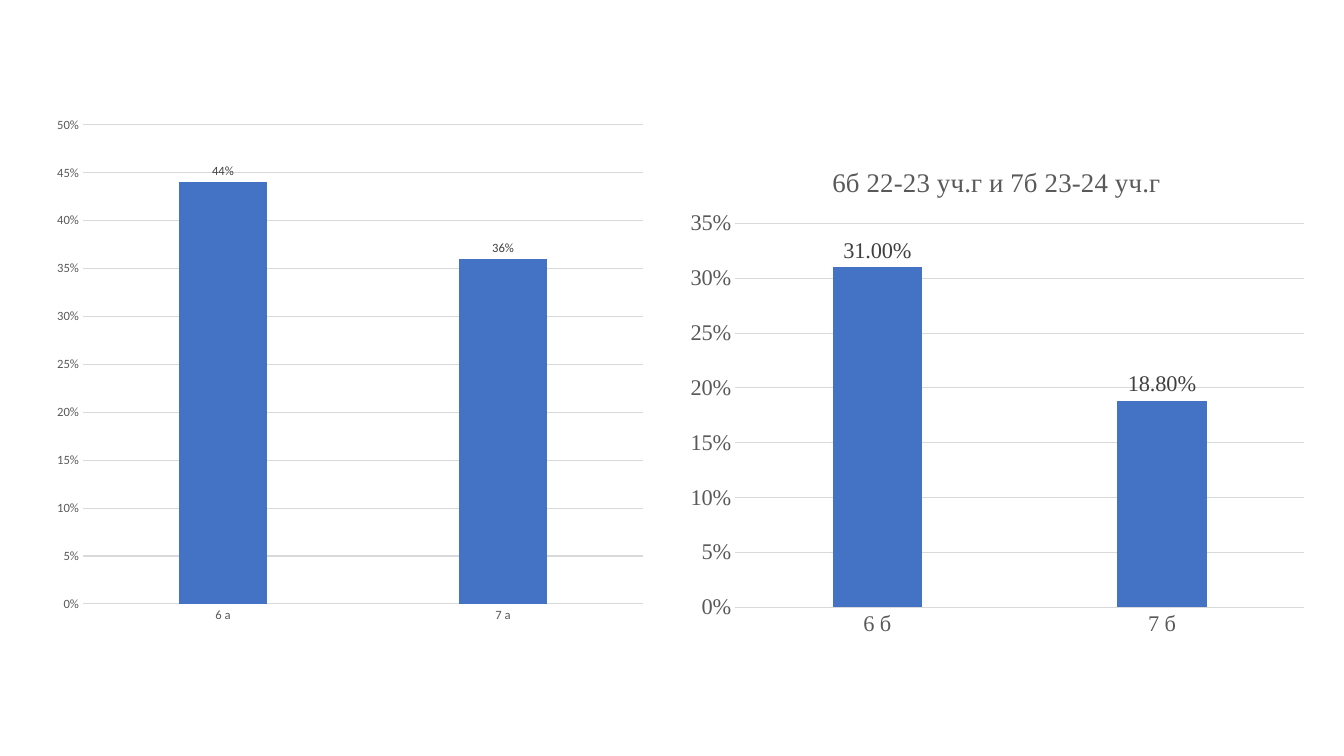
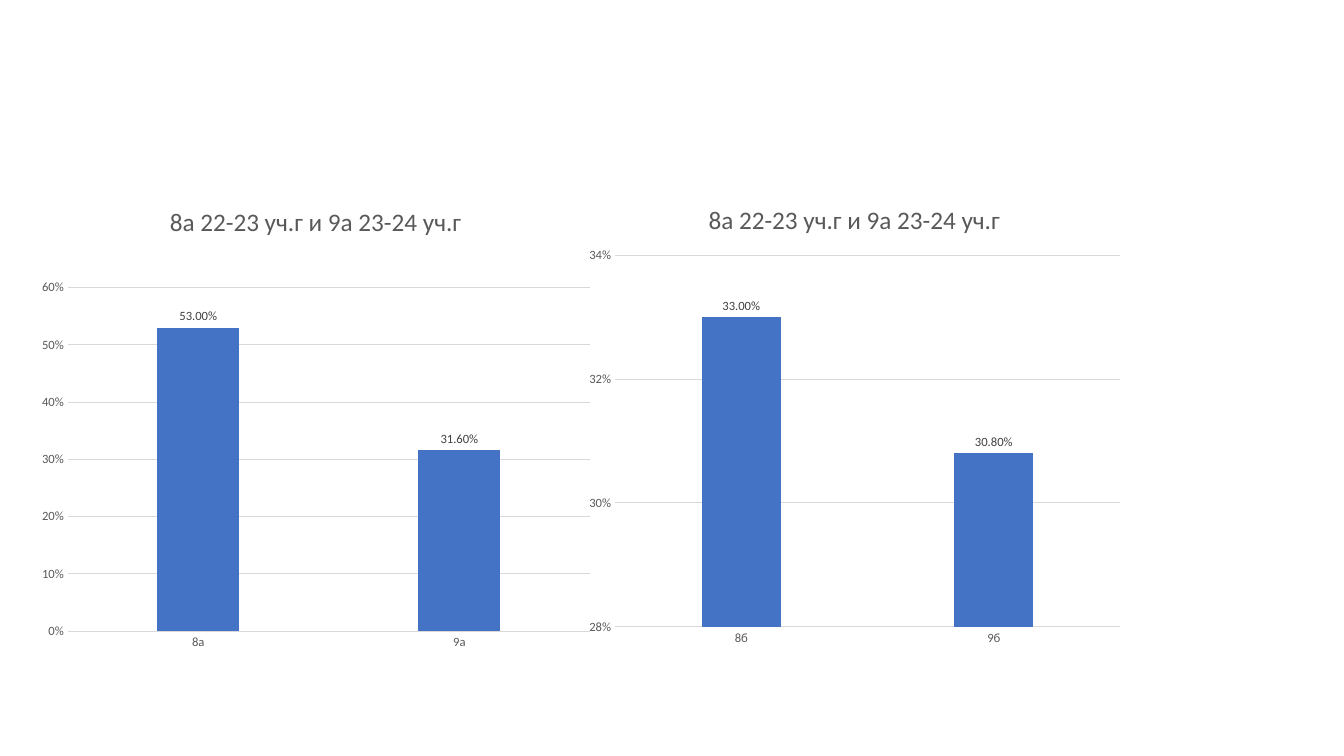
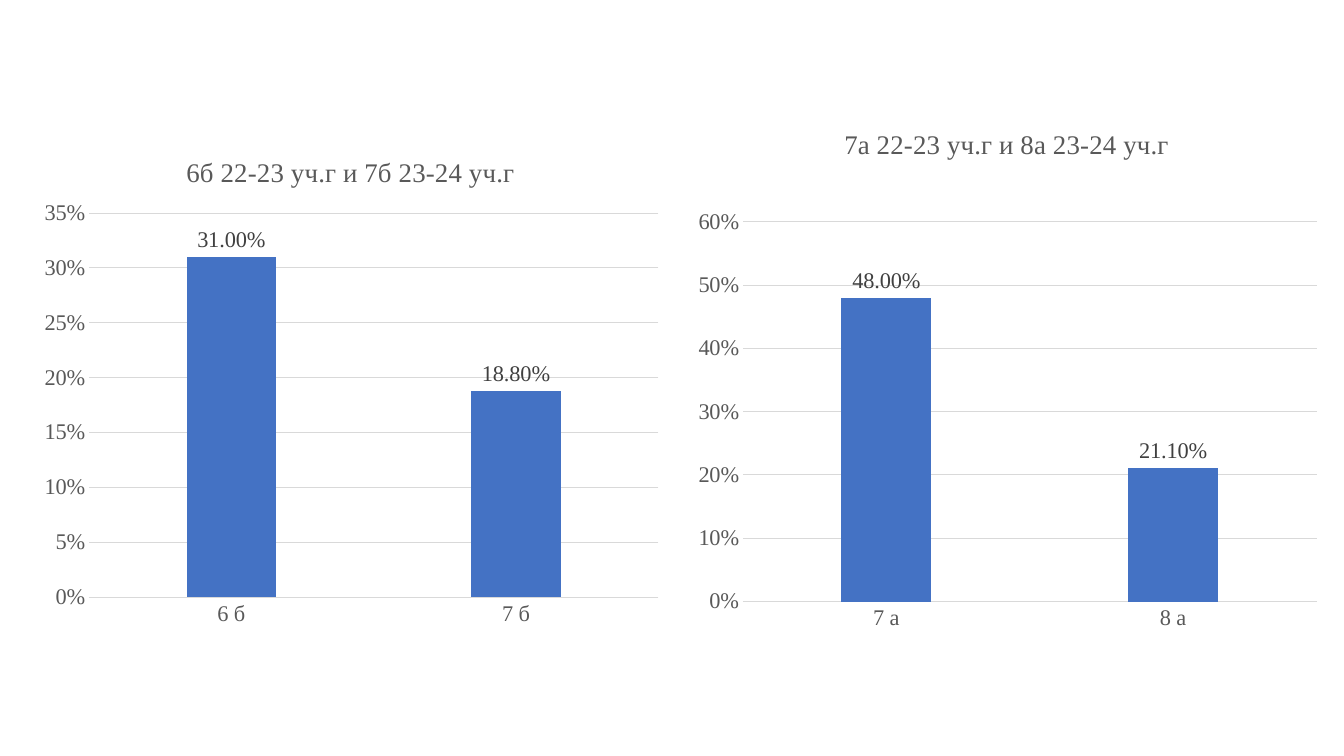
from dataclasses import dataclass

from lxml import etree
from pptx import Presentation
from pptx.chart.data import CategoryChartData
from pptx.dml.color import RGBColor
from pptx.enum.chart import XL_CHART_TYPE as ChartType
from pptx.enum.chart import XL_LABEL_POSITION as LabelPosition
from pptx.enum.chart import XL_TICK_MARK as TickMark
from pptx.oxml import parse_xml
from pptx.oxml.ns import nsdecls, qn
from pptx.util import Cm, Pt

BAR, GRID, TEXT, LABEL = "4472C4", "D9D9D9", "595959", "404040"
PLOT_RIGHT = 0.3


@dataclass
class ChartStyle:
    font: str
    size: float
    title_size: float
    plot_left: float
    plot_bottom: float


COMPACT = ChartStyle("Calibri", 9, 18, 0.97, 0.73)
LARGE = ChartStyle("Times New Roman", 16, 19.2, 1.45, 1)


def rgb(value):
    return RGBColor.from_string(value)


def format_font(font, name, size, color):
    font.name, font.size, font.bold = name, Pt(size), False
    font.color.rgb = rgb(color)


def write_text(frame, text, **style):
    run = frame.paragraphs[0].add_run()
    run.text = text
    format_font(run.font, **style)


def format_line(line, color):
    line.color.rgb = rgb(color)
    line.width = Pt(0.75)


def place_plot(chart, box, style, top):
    """Fix the plot's inner area by its margins inside the chart box."""
    _, _, width, height = box
    shares = {
        "x": style.plot_left / width,
        "y": top / height,
        "w": (width - style.plot_left - PLOT_RIGHT) / width,
        "h": (height - top - style.plot_bottom) / height,
    }
    layout = parse_xml(f"<c:layout {nsdecls('c')}/>")
    manual = etree.SubElement(layout, qn("c:manualLayout"))
    settings = {"layoutTarget": "inner", "xMode": "edge", "yMode": "edge"}
    settings.update((key, f"{share:.4f}") for key, share in shares.items())
    for tag, value in settings.items():
        etree.SubElement(manual, qn(f"c:{tag}")).set("val", value)
    plot_area = chart.plots[0]._element.getparent()
    for old in plot_area.findall(qn("c:layout")):
        plot_area.remove(old)
    plot_area.insert(0, layout)


def add_results(slide, box, style, results, scale, plot_top,
                title=None, label_format="0.00%"):
    """Column chart comparing one class over two school years."""
    data = CategoryChartData(number_format=label_format)
    data.categories = list(results)
    data.add_series("Series 1", list(results.values()))
    chart = slide.shapes.add_chart(
        ChartType.COLUMN_CLUSTERED, *map(Cm, box), data).chart
    chart.has_legend = False
    format_font(chart.font, style.font, style.size, TEXT)

    # Title
    chart.has_title = title is not None
    if title:
        write_text(chart.chart_title.text_frame, title, name=style.font,
                   size=style.title_size, color=TEXT)
        chart.chart_title.include_in_layout = False

    # Axes
    classes, shares = chart.category_axis, chart.value_axis
    for axis in (classes, shares):
        axis.major_tick_mark = axis.minor_tick_mark = TickMark.NONE
        format_font(axis.tick_labels.font, style.font, style.size, TEXT)
    format_line(classes.format.line, GRID)
    shares.format.line.fill.background()
    format_line(shares.major_gridlines.format.line, GRID)
    shares.minimum_scale, shares.maximum_scale, shares.major_unit = scale
    shares.tick_labels.number_format = "0%"
    shares.tick_labels.number_format_is_linked = False

    # Columns and their labels
    columns = chart.plots[0]
    columns.gap_width, columns.overlap = 219, -27
    columns.vary_by_categories = False
    fill = columns.series[0].format.fill
    fill.solid()
    fill.fore_color.rgb = rgb(BAR)
    columns.has_data_labels = True
    labels = columns.data_labels
    labels.show_value = True
    labels.position = LabelPosition.OUTSIDE_END
    labels.number_format = label_format
    labels.number_format_is_linked = False
    format_font(labels.font, style.font, style.size, LABEL)

    place_plot(chart, box, style, plot_top)


def add_6b_7b(slide, left, top):
    """The 6б and 7б chart, shown on two slides."""
    add_results(slide, (left, top, 16.1, 12.65), LARGE,
                {"6 б": 0.31, "7 б": 0.188}, (0, 0.35, 0.05), 1.97,
                title="6б 22-23 уч.г и 7б 23-24 уч.г")


def build_grades_6_7(slide):
    add_results(slide, (1.12, 2.72, 15.39, 13.23), COMPACT,
                {"6 а": 0.44, "7 а": 0.36}, (0, 0.5, 0.05), 0.43,
                label_format="0%")
    add_6b_7b(slide, 17.07, 3.66)


def build_grades_8_9(slide):
    title = "8а 22-23 уч.г и 9а 23-24 уч.г"
    add_results(slide, (0.74, 4.65, 14.43, 11.99), COMPACT,
                {"8а": 0.53, "9а": 0.316}, (0, 0.6, 0.1), 2.6, title=title)
    add_results(slide, (14.53, 4.62, 14, 11.91), COMPACT,
                {"8б": 0.33, "9б": 0.308}, (0.28, 0.34, 0.02), 1.81,
                title=title)


def build_grades_6_8(slide):
    add_6b_7b(slide, 0.79, 3.4)
    add_results(slide, (17.27, 2.67, 16.21, 13.49), LARGE,
                {"7 а": 0.48, "8 а": 0.211}, (0, 0.6, 0.1), 2.92,
                title="7а 22-23 уч.г и 8а 23-24 уч.г")


def main():
    deck = Presentation()
    deck.slide_width, deck.slide_height = Cm(33.87), Cm(19.05)
    blank = deck.slide_layouts[6]
    for build in (build_grades_6_7, build_grades_8_9, build_grades_6_8):
        build(deck.slides.add_slide(blank))
    deck.save("out.pptx")


if __name__ == "__main__":
    main()
